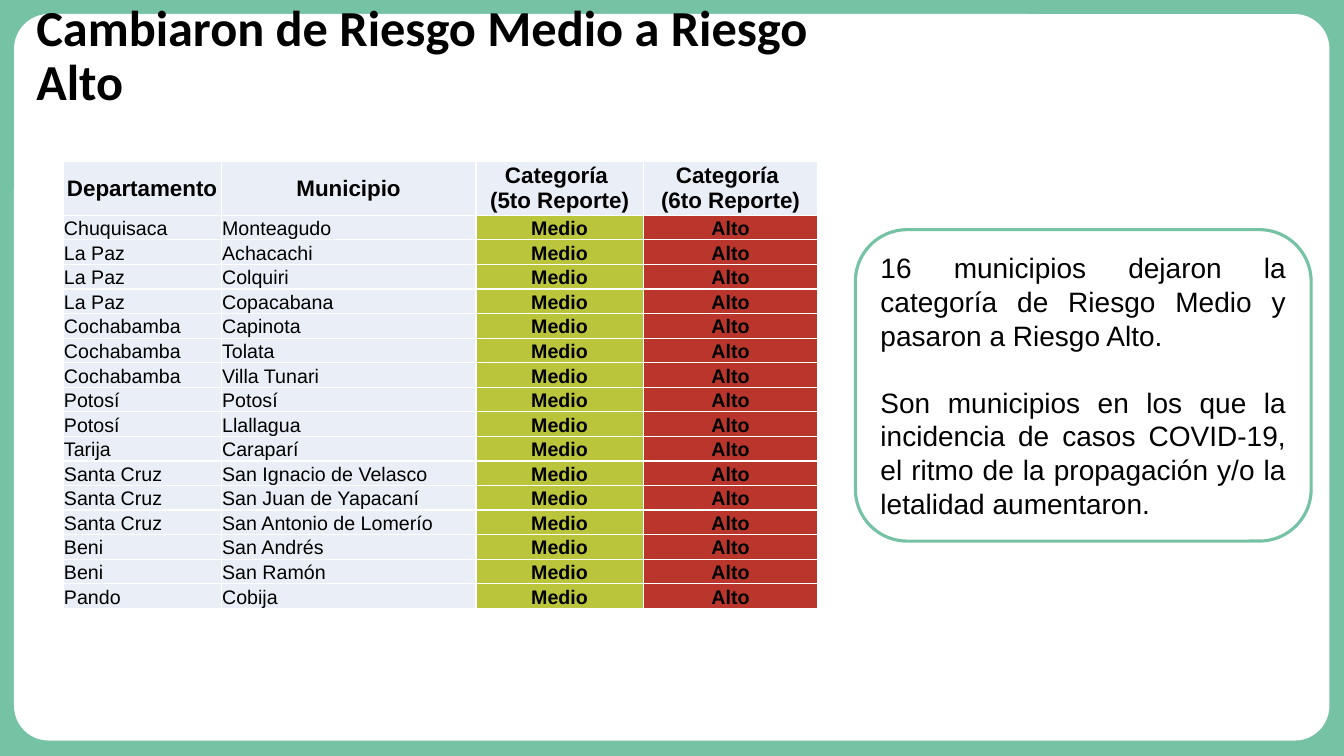
from lxml import etree
from pptx import Presentation
from pptx.dml.color import RGBColor
from pptx.enum.shapes import MSO_SHAPE
from pptx.enum.text import MSO_ANCHOR, PP_ALIGN
from pptx.oxml.ns import qn
from pptx.util import Pt

ROUNDED = MSO_SHAPE.ROUNDED_RECTANGLE
MIDDLE, BOTTOM = MSO_ANCHOR.MIDDLE, MSO_ANCHOR.BOTTOM
LEFT, CENTER, JUSTIFY = PP_ALIGN.LEFT, PP_ALIGN.CENTER, PP_ALIGN.JUSTIFY
GREEN, WHITE, BLACK = "76C2A5", "FFFFFF", "000000"
PALE, MEDIUM_RISK, HIGH_RISK = "EAEFF7", "BBC53B", "BA362C"


def color(value):
    return RGBColor.from_string(value)


def write(frame, lines, alignment, **font_values):
    frame.text = "\n".join(lines)
    for paragraph in frame.paragraphs:
        paragraph.alignment = alignment
        font = paragraph.runs[0].font
        font.color.rgb = color(BLACK)
        for name, value in font_values.items():
            setattr(font, name, value)


presentation = Presentation()
presentation.slide_width = Pt(960)
presentation.slide_height = Pt(540)
slide = presentation.slides.add_slide(presentation.slide_layouts[5])
slide.background.fill.solid()
slide.background.fill.fore_color.rgb = color(GREEN)

panel = slide.shapes.add_shape(ROUNDED, Pt(10), Pt(10), Pt(939.6), Pt(519))
panel.adjustments[0] = 0.048
panel.shadow.inherit = False
panel.fill.solid()
panel.fill.fore_color.rgb = color(WHITE)
panel.line.fill.background()

note = slide.shapes.add_shape(ROUNDED, Pt(611), Pt(164), Pt(325.6), Pt(222.5))
note.shadow.inherit = False
note.fill.background()
note.line.color.rgb = color(GREEN)
note.line.width = Pt(2.25)
note.text_frame.vertical_anchor = MIDDLE
write(note.text_frame, [
    "16 municipios dejaron la categoría de Riesgo Medio y pasaron a Riesgo Alto.",
    "Son municipios en los que la incidencia de casos COVID-19, "
    "el ritmo de la propagación y/o la letalidad aumentaron.",
], JUSTIFY, name="Arial", size=Pt(20))
note.text_frame.paragraphs[1].space_before = Pt(24)

headers = [["Departamento"], ["Municipio"],
           ["Categoría ", "(5to Reporte)"], ["Categoría ", "(6to Reporte)"]]
municipalities = {
    "Chuquisaca": ["Monteagudo"],
    "La Paz": ["Achacachi", "Colquiri", "Copacabana"],
    "Cochabamba": ["Capinota", "Tolata", "Villa Tunari"],
    "Potosí": ["Potosí", "Llallagua"],
    "Tarija": ["Caraparí"],
    "Santa Cruz": ["San Ignacio de Velasco", "San Juan de Yapacaní",
                   "San Antonio de Lomerío"],
    "Beni": ["San Andrés", "San Ramón"],
    "Pando": ["Cobija"],
}
rows = [headers] + [
    [[department], [town], ["Medio"], ["Alto"]]
    for department, towns in municipalities.items() for town in towns
]
column_widths = [113, 182, 119.5, 124.7]
column_fills = [PALE, PALE, MEDIUM_RISK, HIGH_RISK]
header_height, row_height = 38.6, 17.56

table_frame = slide.shapes.add_table(
    len(rows), len(headers), Pt(45), Pt(115.2), Pt(sum(column_widths)),
    Pt(header_height + row_height * (len(rows) - 1)))
table = table_frame.table
for column, width in zip(table.columns, column_widths):
    column.width = Pt(width)

for row_index, row in enumerate(rows):
    is_header = row_index == 0
    table.rows[row_index].height = Pt(header_height if is_header else row_height)
    inset = Pt(0 if is_header else 0.7)
    for column_index, lines in enumerate(row):
        cell = table.cell(row_index, column_index)
        is_category = column_index >= 2
        cell_format = {
            "margin_left": inset, "margin_right": inset,
            "margin_top": inset, "margin_bottom": 0,
            "vertical_anchor": MIDDLE if is_header else BOTTOM,
        }
        for name, value in cell_format.items():
            setattr(cell, name, value)
        write(cell.text_frame, lines, CENTER if is_header or is_category else LEFT,
              name="Arial", size=Pt(16 if is_header else 14),
              bold=is_header or is_category)
        properties = cell._tc.get_or_add_tcPr()
        for side in ("a:lnL", "a:lnR", "a:lnT", "a:lnB"):
            border = etree.SubElement(properties, qn(side), w=str(Pt(1)))
            border_fill = etree.SubElement(border, qn("a:solidFill"))
            etree.SubElement(border_fill, qn("a:srgbClr"), val=WHITE)
        cell.fill.solid()
        cell.fill.fore_color.rgb = color(PALE if is_header else column_fills[column_index])

title = slide.shapes.title
title_format = {"left": Pt(18.7), "top": Pt(22.3), "width": Pt(624.2), "height": Pt(37.4)}
for name, value in title_format.items():
    setattr(title, name, value)
title.text_frame.vertical_anchor = MIDDLE
title.text_frame.word_wrap = True
write(title.text_frame, ["Cambiaron de Riesgo Medio a Riesgo Alto"], LEFT,
      name="Calibri", size=Pt(36), bold=True)
title.text_frame.paragraphs[0].line_spacing = 0.9
table_frame.element.addnext(title.element)

presentation.save("out.pptx")
